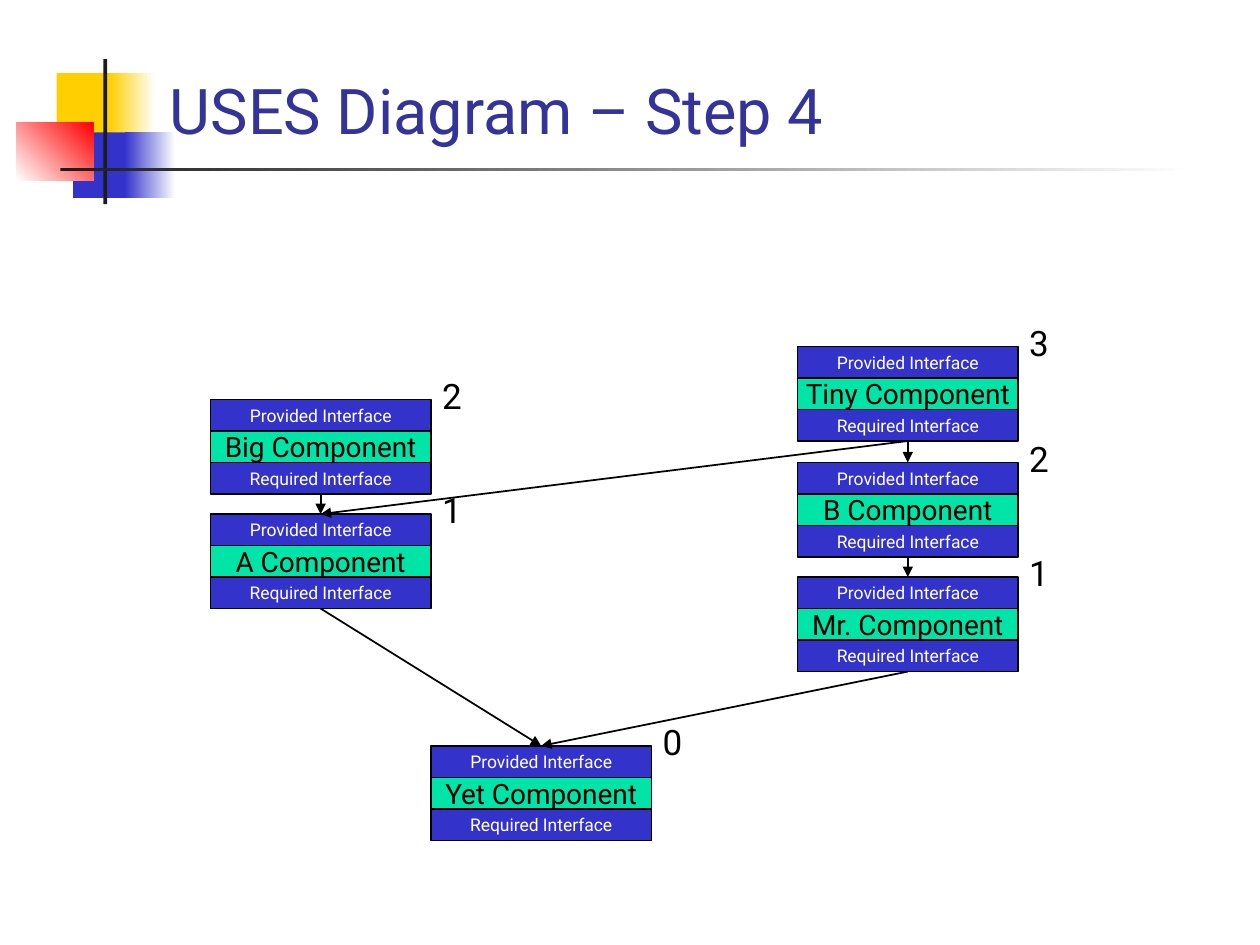
"""Build the USES diagram slide with ranked components and their links."""
from lxml import etree
from pptx import Presentation
from pptx.dml.color import RGBColor
from pptx.enum import shapes, text
from pptx.oxml import ns
from pptx.util import Inches, Pt

BLACK = RGBColor(0x00, 0x00, 0x00)
WHITE = RGBColor(0xFF, 0xFF, 0xFF)
DARK = RGBColor(0x1C, 0x1C, 0x1C)
GOLD = RGBColor(0xFF, 0xCF, 0x01)
BLUE = RGBColor(0x33, 0x33, 0xCC)
RED = RGBColor(0xFF, 0x00, 0x00)
GREEN = RGBColor(0x00, 0xE4, 0xA8)
NAVY = RGBColor(0x33, 0x33, 0x99)

WIDE, ROW = 1.75, 0.25

deck = Presentation()
deck.slide_width, deck.slide_height = Inches(10), Inches(7.5)
slide = deck.slides.add_slide(deck.slide_layouts[6])


def draw(left, top, width, height):
    rect = slide.shapes.add_shape(
        shapes.MSO_SHAPE.RECTANGLE,
        Inches(left), Inches(top), Inches(width), Inches(height))
    rect.shadow.inherit = False
    rect.line.fill.background()
    return rect


def write(shape, words, size, color, anchor, wrap=False):
    frame = shape.text_frame
    frame.word_wrap = wrap
    frame.vertical_anchor = anchor
    para = frame.paragraphs[0]
    run = para.add_run()
    run.text = words
    run.font.name = "Roboto"
    run.font.size = Pt(size)
    run.font.color.rgb = color
    return para


decor = [
    ((0.45, 0.58, 0.48, 0.52), GOLD, GOLD, 0),
    ((0.87, 0.58, 0.36, 0.52), GOLD, WHITE, 0),
    ((0.58, 1.05, 0.46, 0.52), BLUE, BLUE, 0),
    ((0.99, 1.05, 0.4, 0.52), BLUE, WHITE, 0),
    ((0.13, 0.97, 0.61, 0.46), WHITE, RED, 45),
    ((0.82, 0.47, 0.03, 1.15), DARK, DARK, 0),
    ((0.48, 1.33, 9, 0.03), DARK, WHITE, 0),
]
for place, start, end, angle in decor:
    fill = draw(*place).fill
    if start == end:
        fill.solid()
        fill.fore_color.rgb = start
    else:
        fill.gradient()
        fill.gradient_angle = angle
        for stop, color in zip(fill.gradient_stops, (start, end)):
            stop.color.rgb = color

title = slide.shapes.add_textbox(
    Inches(1.25), Inches(0.39), Inches(8.52), Inches(0.83))
write(title, "USES Diagram – Step 4", 36, NAVY, text.MSO_ANCHOR.BOTTOM, True)

parts = {
    "Yet": (3.42, 5.92, "0"),
    "Tiny": (6.33, 2.75, "3"),
    "B": (6.33, 3.67, "2"),
    "Mr.": (6.33, 4.58, "1"),
    "Big": (1.67, 3.17, "2"),
    "A": (1.67, 4.08, "1"),
}
stacks = {}
for name, (left, top, rank) in parts.items():
    rows = [
        ("Provided Interface", 10, WHITE, BLUE),
        (f"{name} Component", 16, BLACK, GREEN),
        ("Required Interface", 10, WHITE, BLUE),
    ]
    stack = []
    for i, (words, size, ink, color) in enumerate(rows):
        rect = draw(left, top + i * ROW, WIDE, ROW)
        rect.fill.solid()
        rect.fill.fore_color.rgb = color
        rect.line.color.rgb = BLACK
        rect.line.width = Pt(1)
        para = write(rect, words, size, ink, text.MSO_ANCHOR.MIDDLE)
        para.alignment = text.PP_ALIGN.CENTER
        stack.append(rect)
    slide.shapes.add_group_shape(stack)
    stacks[name] = stack

links = [("Big", "A"), ("A", "Yet"), ("B", "Mr."),
         ("Tiny", "B"), ("Mr.", "Yet"), ("Tiny", "A")]
for user, used in links:
    link = slide.shapes.add_connector(
        shapes.MSO_CONNECTOR.STRAIGHT, 0, 0, 0, 0)
    link.begin_connect(stacks[user][-1], 2)
    link.end_connect(stacks[used][0], 0)
    link.line.color.rgb = BLACK
    link.line.width = Pt(1)
    etree.SubElement(link.line._get_or_add_ln(), ns.qn("a:tailEnd"),
                     type="triangle")
    etree.SubElement(link._element.spPr, ns.qn("a:effectLst"))

for left, top, rank in parts.values():
    label = slide.shapes.add_textbox(
        Inches(left + WIDE - 0.01), Inches(top - 0.25),
        Inches(0.35), Inches(0.43))
    write(label, rank, 20, BLACK, text.MSO_ANCHOR.TOP)
    label.text_frame.auto_size = text.MSO_AUTO_SIZE.SHAPE_TO_FIT_TEXT

deck.save("out.pptx")
